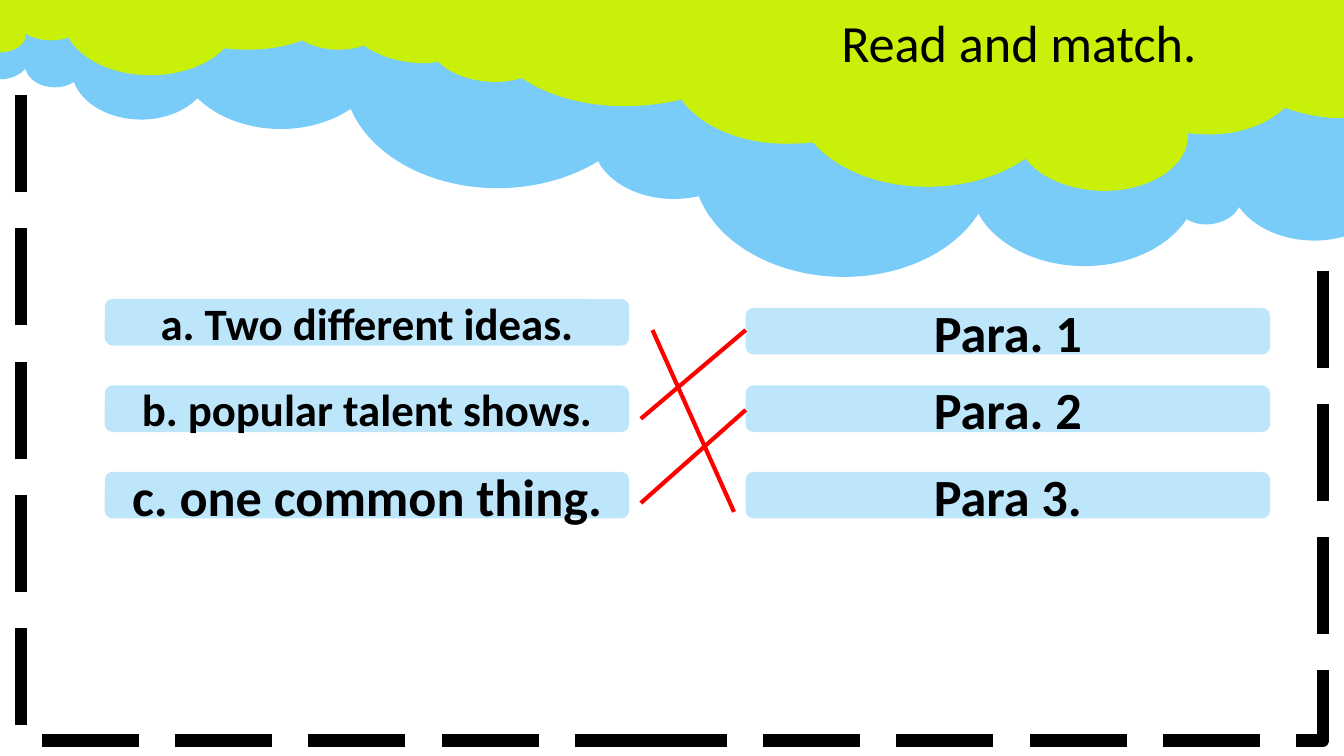
import math

from lxml import etree
from pptx import Presentation
from pptx.dml.color import RGBColor
from pptx.enum import dml, shapes, text
from pptx.oxml import ns
from pptx.util import Inches, Pt

COLORS = {"frame": "000000", "sky": "79CBF8", "lime": "C9F008",
          "card": "BEE6FB", "match": "FF0000", "ink": "000000"}

W = Inches(10)
H = W * 9 // 16
UNIT = W // 100  # every box is given in hundredths of the slide width

# Cloud edges from left to right: lowest points and cusps take turns
SKY_EDGE = [(0, 4.2), (1.9, 3.4), (4.1, 4.8), (5.5, 4.4), (10.5, 7.2),
            (14.7, 5.6), (20.9, 7.9), (26.1, 6.4), (37, 12.3), (44.5, 10.3),
            (50.1, 13.1), (52, 12.9), (62.8, 18.9), (72.8, 14.2),
            (80.7, 18.1), (88.3, 14.6), (89.7, 15), (92.2, 13.7),
            (97.8, 16.2), (100, 15.9)]
LIME_EDGE = [(0, 3.9), (1.9, 2.5), (3.8, 3), (5.1, 2.8), (11.2, 5.6),
             (16.7, 3.6), (18.5, 3.7), (22.5, 3), (25.2, 3.7), (27.1, 3.4),
             (31.6, 4.7), (32.6, 4.6), (36.9, 6.1), (38.8, 5.8),
             (46.4, 7.9), (50.7, 7.4), (58.5, 10.7), (60.5, 10.6),
             (69, 13.9), (76.3, 11.8), (82.2, 14.2), (88.4, 9.9),
             (90, 10), (95.6, 8), (100, 8.8)]

# (label, size, vertical offset as a share of the region)
IDEAS = [("a. Two different ideas.", 24, 0),
         ("b. popular talent shows.", 24, 0),
         ("c. one common thing.", 28, 0)]
PARAS = [("Para. 1", 28, 0.04), ("Para. 2", 28, 0), ("Para 3.", 28, 0)]
# Line ends as shares of the region
MATCHES = [((0.47, 0.14), (0.54, 0.96)),
           ((0.46, 0.54), (0.55, 0.14)),
           ((0.46, 0.92), (0.55, 0.5))]


def rgb(name):
    return RGBColor.from_string(COLORS[name])


def units(*values):
    return [round(v * UNIT) for v in values]


def part(box, x, y, w=0, h=0):
    """Box of a part, given as shares of the box around it."""
    left, top, width, height = box
    return left + x * width, top + y * height, w * width, h * height


def paint(sp, color):
    sp.shadow.inherit = False
    sp.fill.solid()
    sp.fill.fore_color.rgb = rgb(color)
    sp.line.fill.background()


def write(sp, label, size=28, bold=False, color="ink", font="Calibri"):
    tf = sp.text_frame
    tf.word_wrap = True
    tf.vertical_anchor = text.MSO_ANCHOR.MIDDLE
    p = tf.paragraphs[0]
    p.alignment = text.PP_ALIGN.CENTER
    r = p.add_run()
    r.text = label
    r.font.name, r.font.size, r.font.bold = font, Pt(size), bold
    r.font.color.rgb = rgb(color)


def arc(bottom, cusp, ratio):
    """Bezier points of an elliptic arc from its lowest point to a cusp."""
    (bx, by), (cx, cy) = bottom, cusp
    dx, dy = cx - bx, by - cy
    ry = ((dx / ratio) ** 2 + dy ** 2) / (2 * dy)
    angle = math.acos(1 - dy / ry)
    rx = dx / math.sin(angle)
    k = 4 / 3 * math.tan(angle / 4)
    return [bottom, (bx + k * rx, by),
            (cx - k * rx * math.cos(angle), cy + k * ry * math.sin(angle)),
            cusp]


def add_cloud(s, box, edge, ratio, color):
    left, top, width, _ = box
    scale = width / 100
    outline = [units(x * scale, y * scale)
               for x, y in edge + [(100, 0), (0, 0)]]
    fb = s.shapes.build_freeform(*outline[0])
    fb.add_line_segments(outline[1:], close=True)
    sp = fb.convert_to_shape(*units(left, top))
    paint(sp, color)
    # Bend the lower edge into arcs
    lines = list(sp._element.spPr.iter(ns.qn("a:lnTo")))
    for i, (a, b) in enumerate(zip(edge, edge[1:])):
        curve = arc(a, b, ratio) if i % 2 == 0 else arc(b, a, ratio)[::-1]
        lines[i].tag = ns.qn("a:cubicBezTo")
        for n, (x, y) in enumerate(curve[1:3]):
            px, py = units(x * scale, y * scale)
            pt = etree.Element(ns.qn("a:pt"), x=str(px), y=str(py))
            lines[i].insert(n, pt)


def add_frame(s, box):
    sp = s.shapes.add_shape(shapes.MSO_SHAPE.RECTANGLE, *units(*box))
    sp.shadow.inherit = False
    sp.fill.background()
    sp.line.color.rgb = rgb("frame")
    sp.line.width = Pt(6.5)
    sp.line.dash_style = dml.MSO_LINE.LONG_DASH


def add_matching(s, box):
    # Two columns of cards
    for x, column in ((0, IDEAS), (0.55, PARAS)):
        for row, (label, size, shift) in enumerate(column):
            place = part(box, x, row * 0.39 + shift, 0.45, 0.21)
            sp = s.shapes.add_shape(shapes.MSO_SHAPE.ROUNDED_RECTANGLE,
                                    *units(*place))
            paint(sp, "card")
            write(sp, label, size=size, bold=True)
    # Answer lines
    for start, end in MATCHES:
        ends = part(box, *start)[:2] + part(box, *end)[:2]
        line = s.shapes.add_connector(shapes.MSO_CONNECTOR.STRAIGHT,
                                      *units(*ends))
        line.line.color.rgb = rgb("match")
        line.line.width = Pt(2.25)
        etree.SubElement(line._element.spPr, ns.qn("a:effectLst"))


def add_title(s, box):
    write(s.shapes.add_textbox(*units(*box)), "Read and match.")


def main():
    prs = Presentation()
    prs.slide_width, prs.slide_height = W, H
    s = prs.slides.add_slide(prs.slide_layouts[6])
    # Backdrop
    add_frame(s, (1.55, 1.2, 96.9, 53.9))
    add_cloud(s, (0, 1.7, 100, 18.9), SKY_EDGE, 1.35, "sky")
    add_cloud(s, (0, 0, 100, 14.2), LIME_EDGE, 1.5, "lime")
    # Exercise
    add_matching(s, (7.8, 22.25, 86.7, 16.5))
    add_title(s, (42.2, 0, 67.2, 6.2))
    prs.save("out.pptx")


if __name__ == "__main__":
    main()
